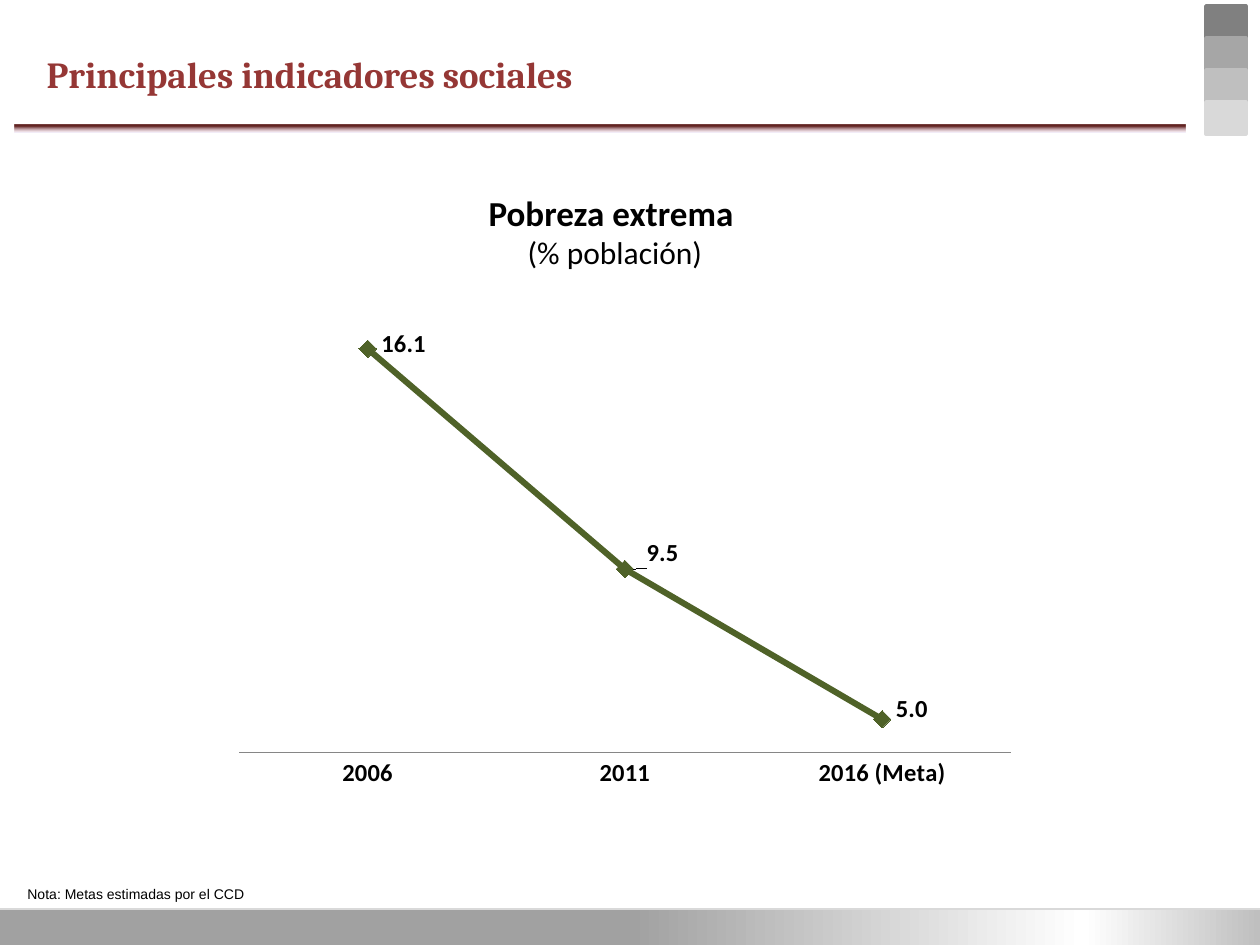
from lxml.etree import SubElement
from pptx import Presentation
from pptx.chart.data import CategoryChartData
from pptx.dml.color import RGBColor
from pptx.enum.chart import XL_CHART_TYPE, XL_LABEL_POSITION, XL_MARKER_STYLE, XL_TICK_MARK
from pptx.enum.shapes import MSO_CONNECTOR, MSO_SHAPE
from pptx.enum.text import MSO_ANCHOR, MSO_AUTO_SIZE, PP_ALIGN
from pptx.oxml import parse_xml
from pptx.oxml.ns import nsdecls, qn
from pptx.util import Emu, Pt

PX = 914400 // 126
COLORS = {name: RGBColor.from_string(value) for name, value in {
    "title": "953735", "text": "000000", "series": "4F6228",
    "axis": "868686", "rule": "D9D9D9",
}.items()}
GRAYS = ["808080", "A6A6A6", "BFBFBF", "D9D9D9"]
FOOTER_STOPS = [(50, "A1A1A1", 100), (86, "FFFFFF", 100), (100, "BFBFBF", 100)]
TITLE_STOPS = [(23, "632523", 100), (97, "FFEBFA", 43), (100, "85C2FF", 100)]


def write(tf, text, size, font, color="text", bold=False, align=PP_ALIGN.LEFT, new=False):
    """Write one formatted paragraph, the first one unless new is set."""
    tf.word_wrap = True
    p = tf.add_paragraph() if new else tf.paragraphs[0]
    p.alignment = align
    r = p.add_run()
    r.text = text
    r.font.size, r.font.name, r.font.bold = Pt(size), font, bold
    r.font.color.rgb = COLORS[color]


def add_gradient_bar(s, box, stops, angle):
    """Add a rectangle filled by (percent, hex, opacity percent) stops."""
    sp = s.shapes.add_shape(MSO_SHAPE.RECTANGLE, *[Emu(v * PX) for v in box])
    sp.shadow.inherit = False
    sp.line.fill.background()
    gs = "".join(
        f'<a:gs pos="{pos * 1000}"><a:srgbClr val="{color}">'
        f'<a:alpha val="{alpha * 1000}"/></a:srgbClr></a:gs>'
        for pos, color, alpha in stops)
    sp._element.spPr.find(qn("a:prstGeom")).addnext(parse_xml(
        f'<a:gradFill {nsdecls("a")} rotWithShape="1"><a:gsLst>{gs}</a:gsLst>'
        f'<a:lin ang="{angle * 60000}" scaled="0"/></a:gradFill>'))


prs = Presentation()
prs.slide_width, prs.slide_height = Emu(1260 * PX), Emu(945 * PX)
s = prs.slides.add_slide(prs.slide_layouts[5])

# Footer band and its rule
add_gradient_bar(s, (0, 908, 1260, 37), FOOTER_STOPS, 0)
rule = s.shapes.add_connector(MSO_CONNECTOR.STRAIGHT, 0, Emu(909 * PX), Emu(1260 * PX), Emu(909 * PX))
rule.line.color.rgb, rule.line.width = COLORS["rule"], Pt(0.75)
SubElement(rule._element.spPr, qn("a:effectLst"))

# Gray squares in the corner
for i, gray in enumerate(GRAYS):
    sp = s.shapes.add_shape(MSO_SHAPE.RECTANGLE, Emu(1206 * PX), Emu((6 + 32 * i) * PX),
                            Emu(40 * PX), Emu(32 * PX))
    sp.shadow.inherit = False
    sp.fill.solid()
    sp.fill.fore_color.rgb = sp.line.color.rgb = RGBColor.from_string(gray)
    sp.line.width = Pt(2)

add_gradient_bar(s, (15, 125, 1171, 8), TITLE_STOPS, 90)

# Line chart
data = CategoryChartData(number_format="0.0")
data.categories = ["2006", "2011", "2016 (Meta)"]
data.add_series("Pobreza extrema", [16.1, 9.5, 5.0])
chart = s.shapes.add_chart(XL_CHART_TYPE.LINE_MARKERS, Emu(223 * PX), Emu(275 * PX),
                           Emu(804 * PX), Emu(525 * PX), data).chart
chart.has_legend = chart.has_title = False
chart.font.name, chart.font.size = "Calibri", Pt(10)
chart.font.color.rgb = COLORS["text"]
chart.plots[0].vary_by_categories = False

cat = chart.category_axis
cat.major_tick_mark = XL_TICK_MARK.NONE
cat.format.line.color.rgb, cat.format.line.width = COLORS["axis"], Pt(0.75)
cat.tick_labels.font.size, cat.tick_labels.font.bold = Pt(14), True
val = chart.value_axis
val.minimum_scale, val.maximum_scale = 4, 18
val.has_major_gridlines = val.visible = False

area = chart._chartSpace.chart.plotArea
for old in area.findall(qn("c:layout")):
    area.remove(old)
area.insert(0, parse_xml(
    f'<c:layout {nsdecls("c")}><c:manualLayout><c:layoutTarget val="inner"/>'
    '<c:xMode val="edge"/><c:yMode val="edge"/><c:x val="0.02"/><c:y val="0.02"/>'
    '<c:w val="0.96"/><c:h val="0.89"/></c:manualLayout></c:layout>'))

ser = chart.plots[0].series[0]
ser.smooth = False
ser.format.line.color.rgb, ser.format.line.width = COLORS["series"], Pt(3.5)
ser.marker.style, ser.marker.size = XL_MARKER_STYLE.DIAMOND, 10
ser.marker.format.fill.solid()
ser.marker.format.fill.fore_color.rgb = COLORS["series"]
ser.marker.format.line.color.rgb = COLORS["series"]

labels = ser.data_labels
labels.show_value = True
labels.number_format, labels.number_format_is_linked = "0.0", False
labels.position = XL_LABEL_POSITION.RIGHT
labels.font.size, labels.font.bold = Pt(14), True
for i, (dx, dy) in enumerate([(0, -0.01), (0.01, -0.03), (0, -0.02)]):
    label = ser.points[i].data_label
    label.position = XL_LABEL_POSITION.RIGHT
    label.font.size, label.font.bold = Pt(14), True
    idx = labels._element.findall(qn("c:dLbl"))[i].find(qn("c:idx"))
    idx.addnext(parse_xml(f'<c:numFmt {nsdecls("c")} formatCode="0.0" sourceLinked="0"/>'))
    idx.addnext(parse_xml(f'<c:layout {nsdecls("c")}><c:manualLayout><c:x val="{dx}"/>'
                          f'<c:y val="{dy}"/></c:manualLayout></c:layout>'))

# Chart heading
tf = s.shapes.add_textbox(Emu(451 * PX), Emu(185 * PX), Emu(328 * PX), Emu(78 * PX)).text_frame
write(tf, "Pobreza extrema ", 20, "Calibri", bold=True, align=PP_ALIGN.CENTER)
write(tf, "(% población)", 18, "Calibri", align=PP_ALIGN.CENTER, new=True)

# Slide title
title = s.shapes.title
title.left, title.top, title.width, title.height = [Emu(v * PX) for v in (34, 45, 929, 80)]
title.text_frame.auto_size = MSO_AUTO_SIZE.NONE
title.text_frame.vertical_anchor = MSO_ANCHOR.TOP
write(title.text_frame, "Principales indicadores sociales", 21, "Cambria", "title", bold=True)

# Note
tf = s.shapes.add_textbox(Emu(15 * PX), Emu(879 * PX), Emu(387 * PX), Emu(30 * PX)).text_frame
write(tf, "Nota: Metas estimadas por el CCD", 8, "Arial")

prs.save("out.pptx")
